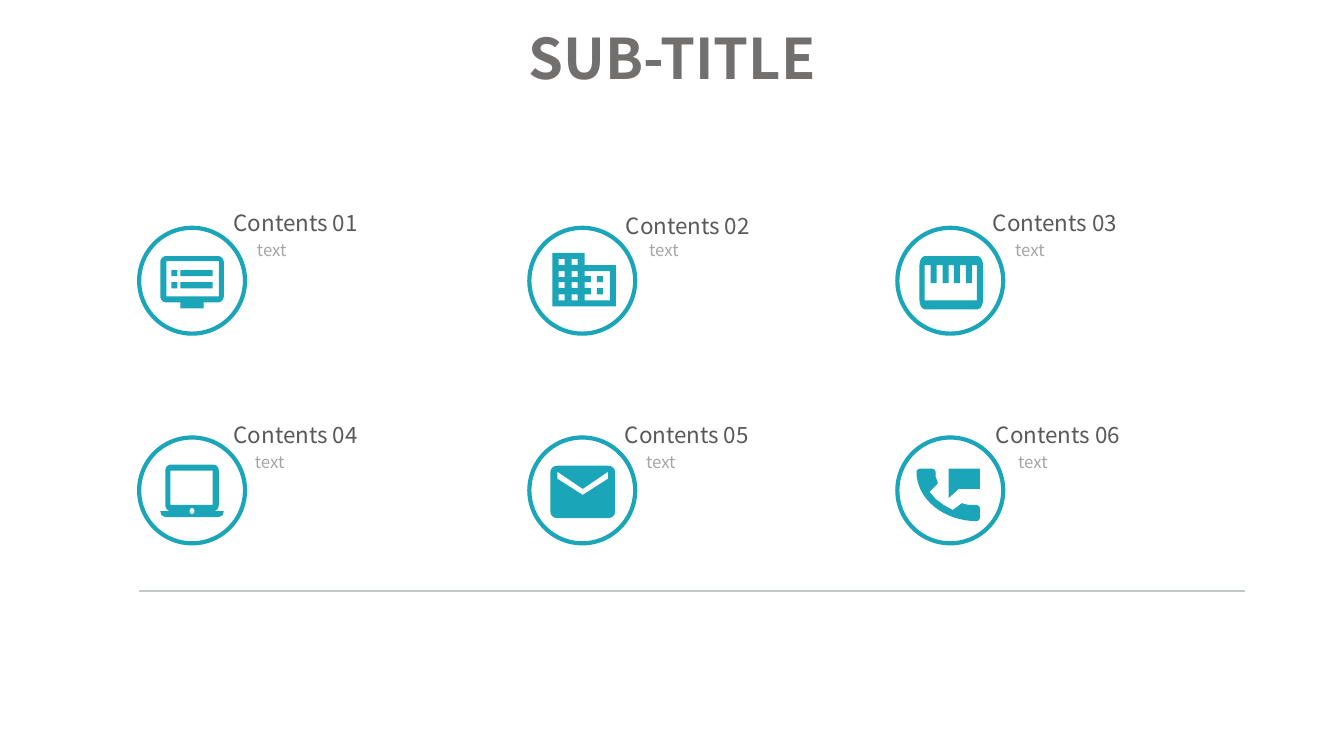
from math import cos, pi, sin

from lxml.etree import SubElement
from pptx import Presentation
from pptx.dml.color import RGBColor
from pptx.enum.shapes import MSO_CONNECTOR, MSO_SHAPE
from pptx.enum.text import MSO_AUTO_SIZE, PP_ALIGN
from pptx.oxml.ns import qn
from pptx.util import Inches, Pt

FONT = "Noto Sans CJK KR"
TEAL = "1AA5B8"
color = RGBColor.from_string

prs = Presentation()
prs.slide_width, prs.slide_height = Inches(13.33), Inches(7.5)
slide = prs.slides.add_slide(prs.slide_layouts[6])


def write(text, left, top, width, height, size, hex_color):
    box = slide.shapes.add_textbox(Inches(left), Inches(top), Inches(width), Inches(height))
    frame = box.text_frame
    frame.word_wrap = True
    frame.auto_size = MSO_AUTO_SIZE.SHAPE_TO_FIT_TEXT
    frame.text = text
    paragraph = frame.paragraphs[0]
    font = paragraph.runs[0].font
    font.name, font.size = FONT, Pt(size)
    font.color.rgb = color(hex_color)
    return paragraph


def rect(left, top, right, bottom, rx=0, ry=0):
    """Return the outline points of a rectangle with elliptical corners."""
    if not rx:
        return [(left, top), (right, top), (right, bottom), (left, bottom)]
    corners = [(right - rx, bottom - ry), (left + rx, bottom - ry),
               (left + rx, top + ry), (right - rx, top + ry)]
    return [(x + rx * cos((quarter + step / 6) * pi / 2),
             y + ry * sin((quarter + step / 6) * pi / 2))
            for quarter, (x, y) in enumerate(corners) for step in range(7)]


# Icons are lists of closed outlines; an outline inside another cuts a hole
monitor = [rect(1.59, 2.54, 2.22, 3, 0.06, 0.06), rect(1.79, 3, 2.02, 3.06),
           rect(1.65, 2.59, 2.17, 2.94)]
for row in (2.68, 2.8):
    monitor += [rect(1.7, row, 1.76, row + 0.06), rect(1.79, row, 2.11, row + 0.06)]

building = [[(5.48, 2.51), (5.8, 2.51), (5.8, 2.63), (6.11, 2.63), (6.11, 3.04), (5.48, 3.04)],
            rect(5.8, 2.69, 6.05, 2.98)]
building += [rect(x, y, x + 0.06, y + 0.06)
             for x in (5.54, 5.67) for y in (2.57, 2.69, 2.8, 2.92)]
building += [rect(x, y, x + 0.06, y + 0.06) for x in (5.8, 5.92) for y in (2.74, 2.86)]

ruler_face = [(9.69, 2.98), (9.17, 2.98), (9.17, 2.63)]
for tick in (9.23, 9.35, 9.46, 9.58):
    ruler_face += [(tick, 2.63), (tick, 2.81), (tick + 0.06, 2.81), (tick + 0.06, 2.63)]
ruler_face.append((9.69, 2.63))
ruler = [rect(9.12, 2.54, 9.75, 3.07, 0.06, 0.09), ruler_face]

laptop = [rect(1.64, 4.61, 2.17, 5.07, 0.05, 0.06),
          [(1.59, 5.07), (2.22, 5.07), (2.21, 5.11), (2.17, 5.13), (1.64, 5.13), (1.6, 5.11)],
          rect(1.69, 4.67, 2.11, 5.01),
          rect(1.88, 5.04, 1.93, 5.1, 0.025, 0.03)]

envelope = [rect(5.46, 4.62, 6.1, 5.14, 0.07, 0.06),
            [(6.03, 4.75), (5.78, 4.91), (5.53, 4.75), (5.53, 4.68), (5.78, 4.85), (6.03, 4.68)]]

handset_back = [(9.69 - 0.6 * cos(step * pi / 32), 4.68 + 0.49 * sin(step * pi / 32))
                for step in range(17)]
handset_front = [(9.71, 5.16), (9.72, 5.14), (9.72, 5.04), (9.71, 5.02), (9.69, 5.01),
                 (9.62, 5.01), (9.56, 5), (9.54, 4.99), (9.53, 5), (9.45, 5.06),
                 (9.36, 5.01), (9.28, 4.95), (9.22, 4.88), (9.29, 4.81), (9.3, 4.8),
                 (9.3, 4.78), (9.28, 4.73), (9.28, 4.68), (9.27, 4.66), (9.25, 4.65),
                 (9.12, 4.65), (9.1, 4.66)]
phone = [handset_back + handset_front,
         [(9.41, 4.65), (9.41, 4.94), (9.51, 4.85), (9.72, 4.85), (9.72, 4.65)]]

title = write("SUB-TITLE", 2.39, 0.18, 8.55, 0.77, 40, "726F6F")
title.alignment = PP_ALIGN.CENTER
title.runs[0].font.bold = True

divider = slide.shapes.add_connector(
    MSO_CONNECTOR.STRAIGHT, Inches(1.38), Inches(5.86), Inches(12.35), Inches(5.86))
divider.line.color.rgb = color("BFC7C7")
divider.line.width = Pt(1.5)
SubElement(divider._element.spPr, qn("a:effectLst"))

# Heading left, heading top, caption left, icon
contents = [
    (2.22, 2.03, 2.45, monitor),
    (6.11, 2.06, 6.34, building),
    (9.75, 2.03, 9.97, ruler),
    (2.22, 4.13, 2.43, laptop),
    (6.1, 4.13, 6.31, envelope),
    (9.78, 4.13, 10, phone),
]
ring_columns = (1.38, 5.25, 8.9)
rows = ((2.26, 2.33), (4.34, 4.43))

for index, (heading_left, heading_top, caption_left, icon) in enumerate(contents):
    ring_top, caption_top = rows[index // 3]
    write(f"Contents {index + 1:02}", heading_left, heading_top, 2.04, 0.37, 16, "595959")
    write("text", caption_left, caption_top, 2.35, 0.3, 12, "A7A5A6")

    ring = slide.shapes.add_shape(
        MSO_SHAPE.OVAL, Inches(ring_columns[index % 3]), Inches(ring_top),
        Inches(1.05), Inches(1.05))
    ring.shadow.inherit = False
    ring.fill.background()
    ring.line.color.rgb = color(TEAL)
    ring.line.width = Pt(3)

    outlines = [[(Inches(x), Inches(y)) for x, y in outline] for outline in icon]
    builder = slide.shapes.build_freeform(*outlines[0][0])
    builder.add_line_segments(outlines[0][1:])
    for outline in outlines[1:]:
        builder.move_to(*outline[0])
        builder.add_line_segments(outline[1:])
    symbol = builder.convert_to_shape()
    symbol.shadow.inherit = False
    symbol.fill.solid()
    symbol.fill.fore_color.rgb = color(TEAL)
    symbol.line.fill.background()

prs.save("out.pptx")
